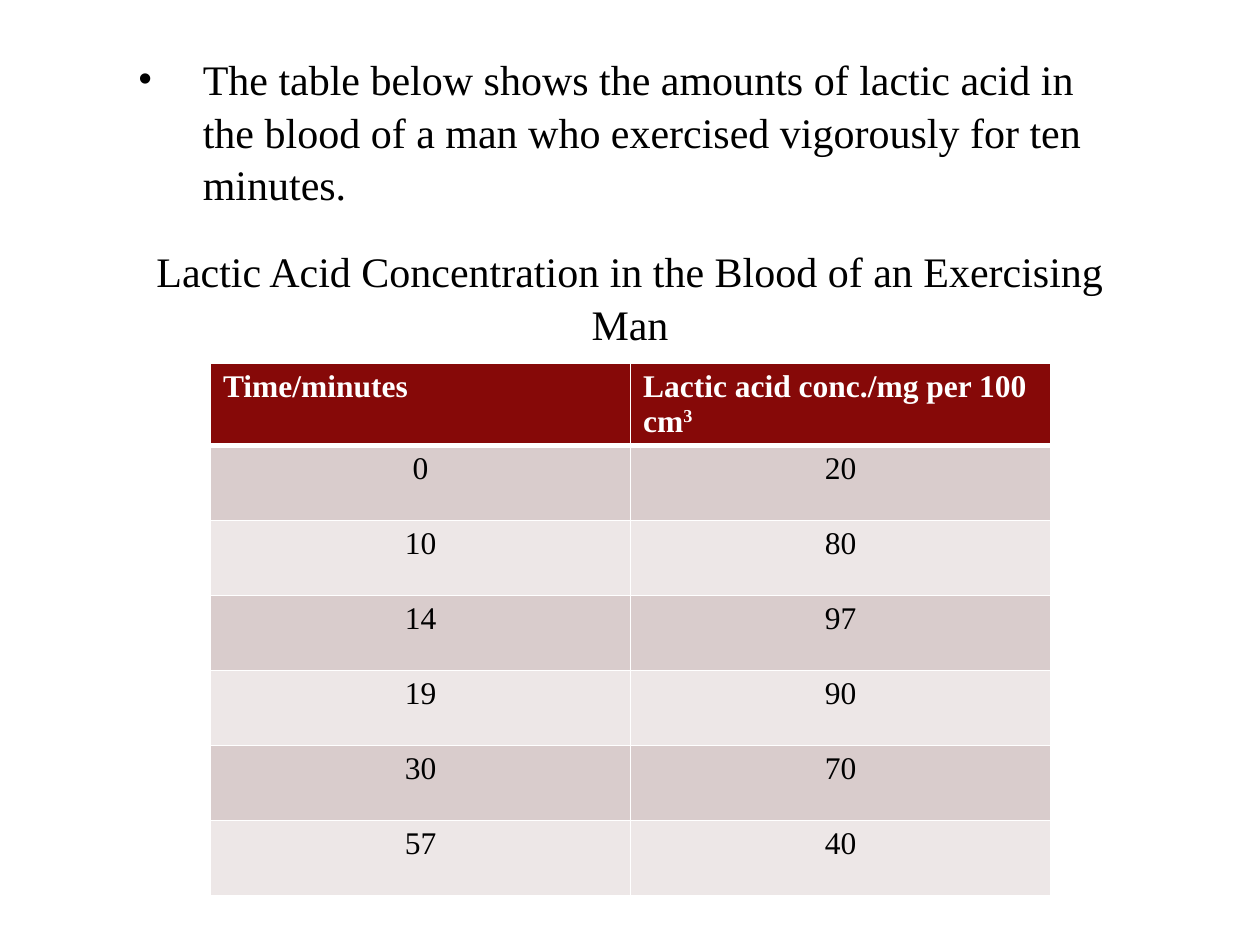
import lxml.etree
import pptx
import pptx.dml.color
import pptx.enum.text
import pptx.oxml.ns
import pptx.util

Inches = pptx.util.Inches
Pt = pptx.util.Pt
ALIGN = pptx.enum.text.PP_ALIGN
BLACK = pptx.dml.color.RGBColor(0, 0, 0)
WHITE = pptx.dml.color.RGBColor(0xFF, 0xFF, 0xFF)
HEADER_RED = pptx.dml.color.RGBColor(0x86, 0x09, 0x08)
BAND_DARK = pptx.dml.color.RGBColor(0xD9, 0xCC, 0xCC)
BAND_LIGHT = pptx.dml.color.RGBColor(0xED, 0xE7, 0xE7)

INTRODUCTION = (
    "The table below shows the amounts of lactic acid in the blood of a man "
    "who exercised vigorously for ten minutes."
)
CAPTION = "Lactic Acid Concentration in the Blood of an Exercising Man"
HEADERS = [("Time/minutes", ""), ("Lactic acid conc./mg per 100 cm", "3")]
READINGS = [(0, 20), (10, 80), (14, 97), (19, 90), (30, 70), (57, 40)]


def set_attributes(target, values):
    for name, value in values.items():
        setattr(target, name, value)


def add_element(parent, tag, **attributes):
    return lxml.etree.SubElement(parent, pptx.oxml.ns.qn(tag), **attributes)


class SlideBuilder:
    font_name = "Times New Roman"

    def __init__(self, presentation):
        self.slide = presentation.slides.add_slide(presentation.slide_layouts[1])
        title = self.slide.shapes.title
        title.element.getparent().remove(title.element)

    def format_font(self, font, size, color, bold=False):
        set_attributes(font, {"name": self.font_name, "size": Pt(size), "bold": bold})
        font.color.rgb = color

    def set_bullet(self, paragraph, character, indent):
        properties = paragraph._p.get_or_add_pPr()
        properties.set("marL", str(Inches(indent)))
        properties.set("indent", str(-Inches(indent)))
        if character:
            add_element(properties, "a:buSzPct", val="90000")
            add_element(properties, "a:buFont", typeface="Arial")
            add_element(properties, "a:buChar", char=character)
        else:
            add_element(properties, "a:buNone")

    def body(self, items, left, top, width, height):
        placeholder = self.slide.placeholders[1]
        set_attributes(placeholder, {
            "left": Inches(left), "top": Inches(top),
            "width": Inches(width), "height": Inches(height),
        })
        frame = placeholder.text_frame
        frame.auto_size = pptx.enum.text.MSO_AUTO_SIZE.NONE
        for index, (text, character, indent, alignment) in enumerate(items):
            paragraph = frame.add_paragraph() if index else frame.paragraphs[0]
            self.set_bullet(paragraph, character, indent)
            set_attributes(paragraph, {
                "alignment": alignment,
                "space_before": Pt(20 if index else 0),
                "line_spacing": 1.04,
            })
            run = paragraph.add_run()
            run.text = text
            self.format_font(run.font, 24, BLACK)

    def set_borders(self, cell, bottom_width):
        properties = cell._tc.get_or_add_tcPr()
        widths = {"L": 1, "R": 1, "T": 1, "B": bottom_width}
        for position, (side, width) in enumerate(widths.items()):
            line = add_element(properties, f"a:ln{side}", w=str(Pt(width)))
            fill = add_element(line, "a:solidFill")
            add_element(fill, "a:srgbClr", val=str(WHITE))
            properties.insert(position, line)

    def cell(self, cell, text, superscript, fill, color, bold, alignment, bottom_width):
        cell.fill.solid()
        cell.fill.fore_color.rgb = fill
        self.set_borders(cell, bottom_width)
        paragraph = cell.text_frame.paragraphs[0]
        paragraph.alignment = alignment
        for content, baseline in ((text, None), (superscript, "30000")):
            if content:
                run = paragraph.add_run()
                run.text = content
                self.format_font(run.font, 18, color, bold)
                if baseline:
                    run._r.get_or_add_rPr().set("baseline", baseline)

    def table(self, headers, readings, left, top, width, height):
        table = self.slide.shapes.add_table(
            len(readings) + 1, len(headers),
            Inches(left), Inches(top), Inches(width), Inches(height),
        ).table
        for column, (text, superscript) in enumerate(headers):
            self.cell(table.cell(0, column), text, superscript,
                      HEADER_RED, WHITE, True, ALIGN.LEFT, 3)
        for row, values in enumerate(readings, 1):
            fill = BAND_DARK if row % 2 else BAND_LIGHT
            for column, value in enumerate(values):
                self.cell(table.cell(row, column), str(value), "",
                          fill, BLACK, False, ALIGN.CENTER, 1)
        for column in range(len(headers)):
            header = table.cell(0, column)._tc.tcPr
            bottom = header.find(pptx.oxml.ns.qn("a:lnB"))
            below = table.cell(1, column)._tc.tcPr.find(pptx.oxml.ns.qn("a:lnT"))
            below.set("w", bottom.get("w"))


def main():
    presentation = pptx.Presentation()
    set_attributes(presentation, {"slide_width": Inches(10), "slide_height": Inches(7.5)})
    builder = SlideBuilder(presentation)
    builder.body(
        [(INTRODUCTION, "•", 0.51, ALIGN.LEFT), (CAPTION, "", 0, ALIGN.CENTER)],
        1, 0.36, 8, 6.93,
    )
    builder.table(HEADERS, READINGS, 1.67, 2.88, 6.67, 4.17)
    presentation.save("out.pptx")


if __name__ == "__main__":
    main()
